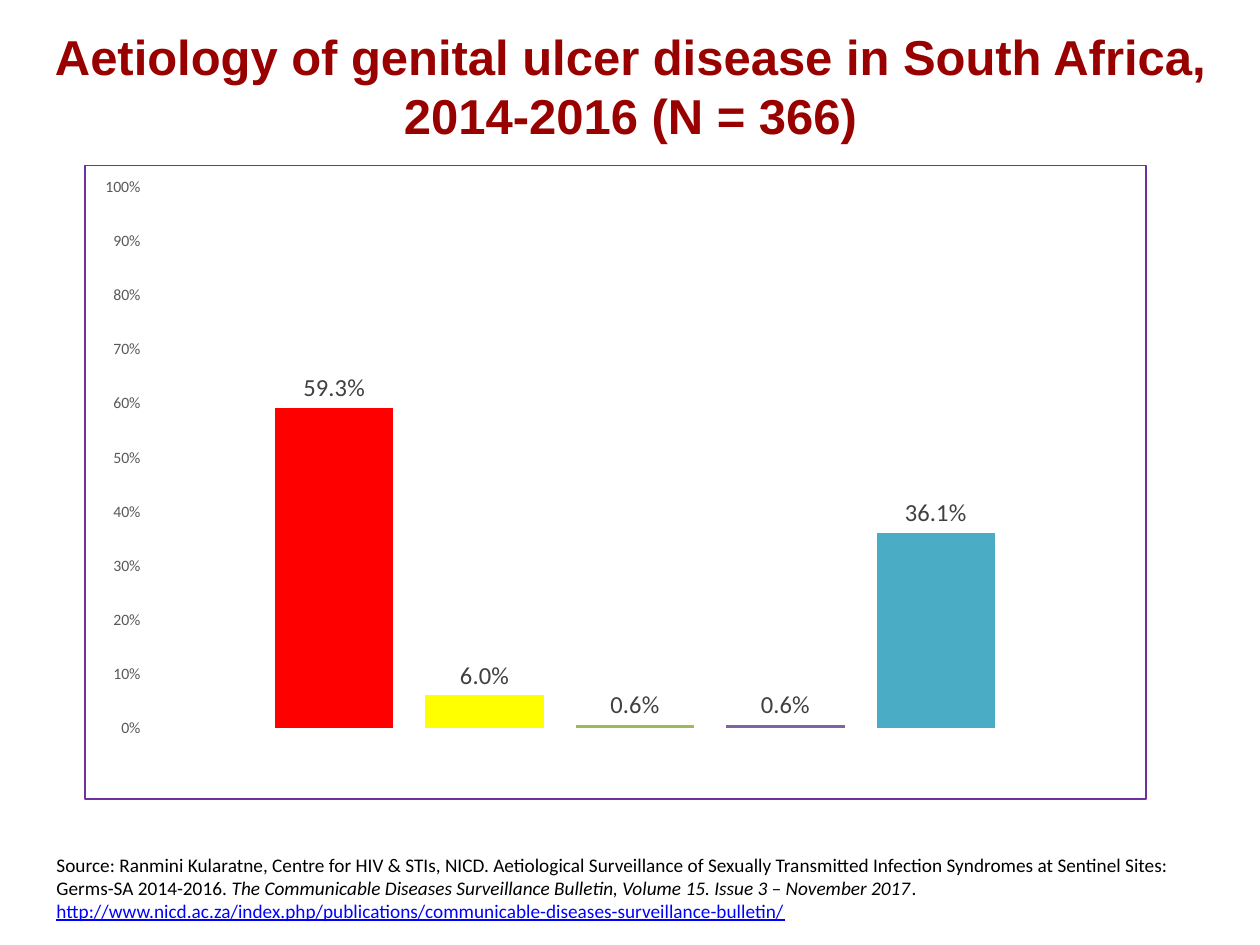
from lxml import etree
from pptx import Presentation
from pptx import util as u
from pptx.chart import data as chart_data
from pptx.dml import color as dml
from pptx.enum import chart as ch
from pptx.enum import text
from pptx.oxml import ns, parse_xml

COLOURS = {
    "title": "990000", "body": "000000", "link": "0000FF",
    "axis": "595959", "label": "404040", "border": "7030A0",
    "red": "FF0000", "yellow": "FFFF00", "green": "9BBB59",
    "purple": "8064A2", "teal": "4BACC6",
}
# Column colour and share, from left to right
COLUMNS = [("red", 0.593), ("yellow", 0.06), ("green", 0.006),
           ("purple", 0.006), ("teal", 0.361)]
# Inner plot area as fractions of the chart frame
PLOT_AREA = {"x": 0.057, "y": 0.035, "w": 0.923, "h": 0.853}


def rgb(name):
    return dml.RGBColor.from_string(COLOURS[name])


def set_values(target, values):
    for name, value in values.items():
        setattr(target, name, value)


class SlideBuilder:
    """Holds the style and the current slide."""

    def __init__(self, slide, font="Calibri"):
        self.slide = slide
        self.font = font

    def style_font(self, font, colour, size, **values):
        set_values(font, {"name": self.font, "size": u.Pt(size), **values})
        font.color.rgb = rgb(colour)

    def add_text(self, box, runs, anchor=text.MSO_ANCHOR.TOP, align=text.PP_ALIGN.LEFT):
        shape = self.slide.shapes.add_textbox(*map(u.Pt, box))
        set_values(shape.text_frame, {"word_wrap": True, "vertical_anchor": anchor})
        paragraph = shape.text_frame.paragraphs[0]
        paragraph.alignment = align
        for wording, style in runs:
            run = paragraph.add_run()
            run.text = wording
            self.style_font(run.font, **style)

    def add_column_chart(self, box, columns):
        data = chart_data.CategoryChartData(number_format="0.0%")
        data.categories = [""]
        for _, share in columns:
            data.add_series("", [share])
        frame = self.slide.shapes.add_chart(
            ch.XL_CHART_TYPE.COLUMN_CLUSTERED, *map(u.Pt, box), data)
        chart = frame.chart
        set_values(chart, {"has_legend": False, "has_title": False})
        self.style_font(chart.font, "body", 10)

        # Axes
        chart.category_axis.visible = False
        axis = chart.value_axis
        set_values(axis, {"minimum_scale": 0, "maximum_scale": 1, "major_unit": 0.1,
                          "has_major_gridlines": False,
                          "major_tick_mark": ch.XL_TICK_MARK.NONE})
        axis.format.line.fill.background()
        set_values(axis.tick_labels, {"number_format": "0%",
                                      "number_format_is_linked": False})
        self.style_font(axis.tick_labels.font, "axis", 9)

        # Columns and their labels
        plot = chart.plots[0]
        set_values(plot, {"gap_width": 219, "overlap": -27, "vary_by_categories": False})
        for series, (colour, _) in zip(plot.series, columns):
            series.format.fill.solid()
            series.format.fill.fore_color.rgb = rgb(colour)
            labels = series.data_labels
            set_values(labels, {"show_value": True, "number_format": "0.0%",
                                "number_format_is_linked": False,
                                "position": ch.XL_LABEL_POSITION.OUTSIDE_END})
            self.style_font(labels.font, "label", 14)
        self.place_plot(chart)
        self.add_border(chart, "border", 0.75)

    def place_plot(self, chart):
        area = chart.element.find(".//" + ns.qn("c:plotArea"))
        for old in area.findall(ns.qn("c:layout")):
            area.remove(old)
        layout = etree.Element(ns.qn("c:layout"))
        manual = etree.SubElement(layout, ns.qn("c:manualLayout"))
        settings = {"layoutTarget": "inner", "xMode": "edge", "yMode": "edge", **PLOT_AREA}
        for name, value in settings.items():
            etree.SubElement(manual, ns.qn("c:" + name), val=str(value))
        area.insert(0, layout)

    def add_border(self, chart, colour, width):
        chart.element.find(ns.qn("c:chart")).addnext(parse_xml(
            f'<c:spPr {ns.nsdecls("c", "a")}><a:noFill/><a:ln w="{u.Pt(width)}">'
            f'<a:solidFill><a:srgbClr val="{COLOURS[colour]}"/></a:solidFill>'
            '</a:ln></c:spPr>'))


def main():
    presentation = Presentation()
    set_values(presentation, {"slide_width": u.Pt(720), "slide_height": u.Pt(540)})
    builder = SlideBuilder(presentation.slides.add_slide(presentation.slide_layouts[6]))

    # Title
    title_style = {"colour": "title", "size": 28, "name": "Arial", "bold": True}
    builder.add_text(
        (20, 0, 680.4, 97.2),
        [("Aetiology of genital ulcer disease in South Africa, 2014-2016 (N = 366)",
          title_style)],
        text.MSO_ANCHOR.MIDDLE, text.PP_ALIGN.CENTER)

    # Column chart
    builder.add_column_chart((48.2, 94.2, 607, 362.8), COLUMNS)

    # Source note
    body = {"colour": "body", "size": 11}
    builder.add_text((25.2, 483.8, 657.4, 47.5), [
        ("Source: Ranmini Kularatne, Centre for HIV & STIs, NICD. Aetiological "
         "Surveillance of Sexually Transmitted Infection Syndromes at Sentinel Sites: "
         "Germs-SA 2014-2016. ", body),
        ("The Communicable Diseases Surveillance Bulletin, Volume 15. "
         "Issue 3 – November 2017", {**body, "italic": True}),
        (". ", body),
        ("http://www.nicd.ac.za/index.php/publications/"
         "communicable-diseases-surveillance-bulletin/",
         {**body, "colour": "link", "underline": True}),
    ])

    presentation.save("out.pptx")


if __name__ == "__main__":
    main()
